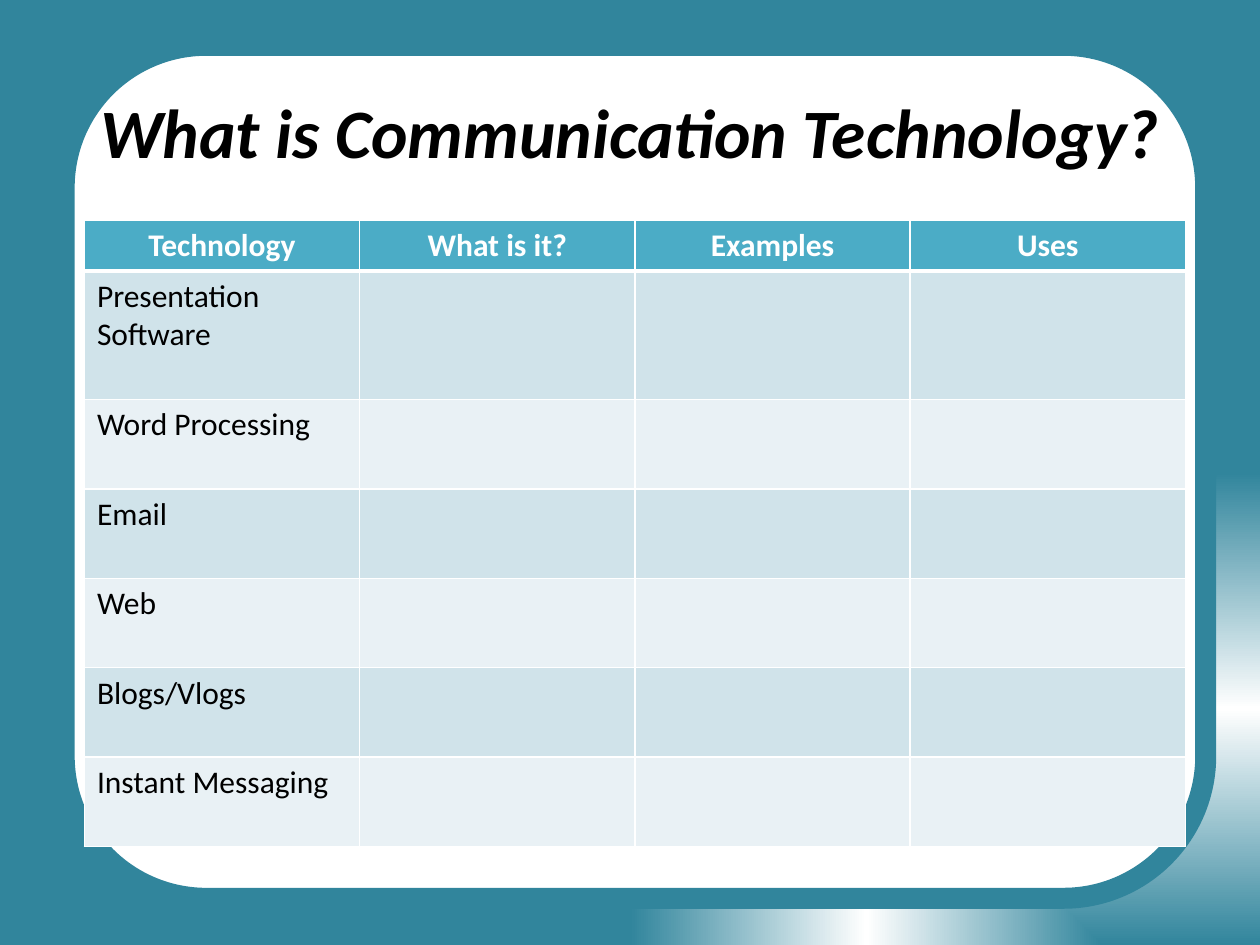
from pptx import Presentation
from pptx.dml.color import RGBColor
from pptx.enum.shapes import MSO_SHAPE
from pptx.enum.text import MSO_ANCHOR, PP_ALIGN
from pptx.oxml import parse_xml
from pptx.oxml.ns import nsdecls, qn
from pptx.util import Inches, Pt

ROUNDED = MSO_SHAPE.ROUNDED_RECTANGLE
CENTER, LEFT = PP_ALIGN.CENTER, PP_ALIGN.LEFT
MIDDLE = MSO_ANCHOR.MIDDLE
FONT = "Calibri"
TEAL, AQUA, WHITE, BLACK = "31859C", "4BACC6", "FFFFFF", "000000"
BANDS = ("D0E3EA", "E9F1F5")
HEADERS = ("Technology", "What is it?", "Examples", "Uses")
TECHNOLOGIES = ("Presentation Software", "Word Processing", "Email", "Web",
                "Blogs/Vlogs", "Instant Messaging")
ROW_HEIGHTS = (0.4, 1.02) + (0.71,) * 5


def color(value):
    """Turn a hex string into a colour."""
    return RGBColor.from_string(value)


def style(paragraph, size, value, bold=False, italic=False, align=LEFT):
    """Set the font and alignment of a paragraph."""
    paragraph.alignment = align
    font = paragraph.font
    font.name, font.size = FONT, Pt(size)
    font.bold, font.italic = bold, italic
    font.color.rgb = color(value)


def paint_background(slide):
    """Fill the background with a gradient centred on the bottom right corner."""
    slide.background.fill.solid()
    solid = next(slide.element.iter(qn("a:solidFill")))
    stops = "".join(
        f'<a:gs pos="{share * 1000}"><a:srgbClr val="{value}"/></a:gs>'
        for share, value in ((0, TEAL), (50, WHITE), (100, TEAL)))
    gradient = parse_xml(
        f'<a:gradFill {nsdecls("a")} rotWithShape="1"><a:gsLst>{stops}</a:gsLst>'
        '<a:path path="rect"><a:fillToRect l="100000" t="100000"/></a:path>'
        '<a:tileRect r="-100000" b="-100000"/></a:gradFill>')
    solid.getparent().replace(solid, gradient)


def add_panel(slide, box):
    """Draw the rounded white panel with its thick teal outline."""
    panel = slide.shapes.add_shape(ROUNDED, *map(Inches, box))
    panel.shadow.inherit = False
    panel.fill.solid()
    panel.fill.fore_color.rgb = color(WHITE)
    panel.line.color.rgb = color(TEAL)
    panel.line.width = Pt(12)


def add_title(slide, box, text):
    """Write the centred slide title."""
    frame = slide.shapes.add_textbox(*map(Inches, box)).text_frame
    frame.word_wrap = True
    frame.vertical_anchor = MIDDLE
    frame.text = text
    style(frame.paragraphs[0], 39.6, BLACK, bold=True, italic=True, align=CENTER)


def set_borders(cell, top, bottom):
    """Give a cell white borders with the given top and bottom widths."""
    properties = cell._tc.get_or_add_tcPr()
    widths = (("L", 1), ("R", 1), ("T", top), ("B", bottom))
    for index, (side, width) in enumerate(widths):
        properties.insert(index, parse_xml(
            f'<a:ln{side} {nsdecls("a")} w="{Pt(width)}"><a:solidFill>'
            f'<a:srgbClr val="{WHITE}"/></a:solidFill></a:ln{side}>'))


def add_technology_table(slide, left, top, width):
    """Build the banded table with one row for each technology."""
    rows = [HEADERS] + [(name, "", "", "") for name in TECHNOLOGIES]
    table = slide.shapes.add_table(
        len(rows), len(HEADERS), Inches(left), Inches(top),
        Inches(width), Inches(sum(ROW_HEIGHTS))).table
    for column in table.columns:
        column.width = Inches(width / len(HEADERS))
    for index, (texts, height) in enumerate(zip(rows, ROW_HEIGHTS)):
        header = index == 0
        table.rows[index].height = Inches(height)
        for cell, text in zip(table.rows[index].cells, texts):
            cell.text = text
            style(cell.text_frame.paragraphs[0], 18, WHITE if header else BLACK,
                  bold=header, align=CENTER if header else LEFT)
            cell.fill.solid()
            cell.fill.fore_color.rgb = color(AQUA if header else BANDS[(index - 1) % 2])
            set_borders(cell, 3 if index == 1 else 1, 3 if header else 1)


def main():
    """Build and save the presentation."""
    presentation = Presentation()
    presentation.slide_width, presentation.slide_height = Inches(10), Inches(7.5)
    slide = presentation.slides.add_slide(presentation.slide_layouts[6])
    paint_background(slide)
    add_panel(slide, (0.51, 0.36, 9.06, 6.77))
    add_title(slide, (0.5, 0.52, 9, 1.03), "What is Communication Technology?")
    add_technology_table(slide, 0.67, 1.75, 8.74)
    presentation.save("out.pptx")


if __name__ == "__main__":
    main()
